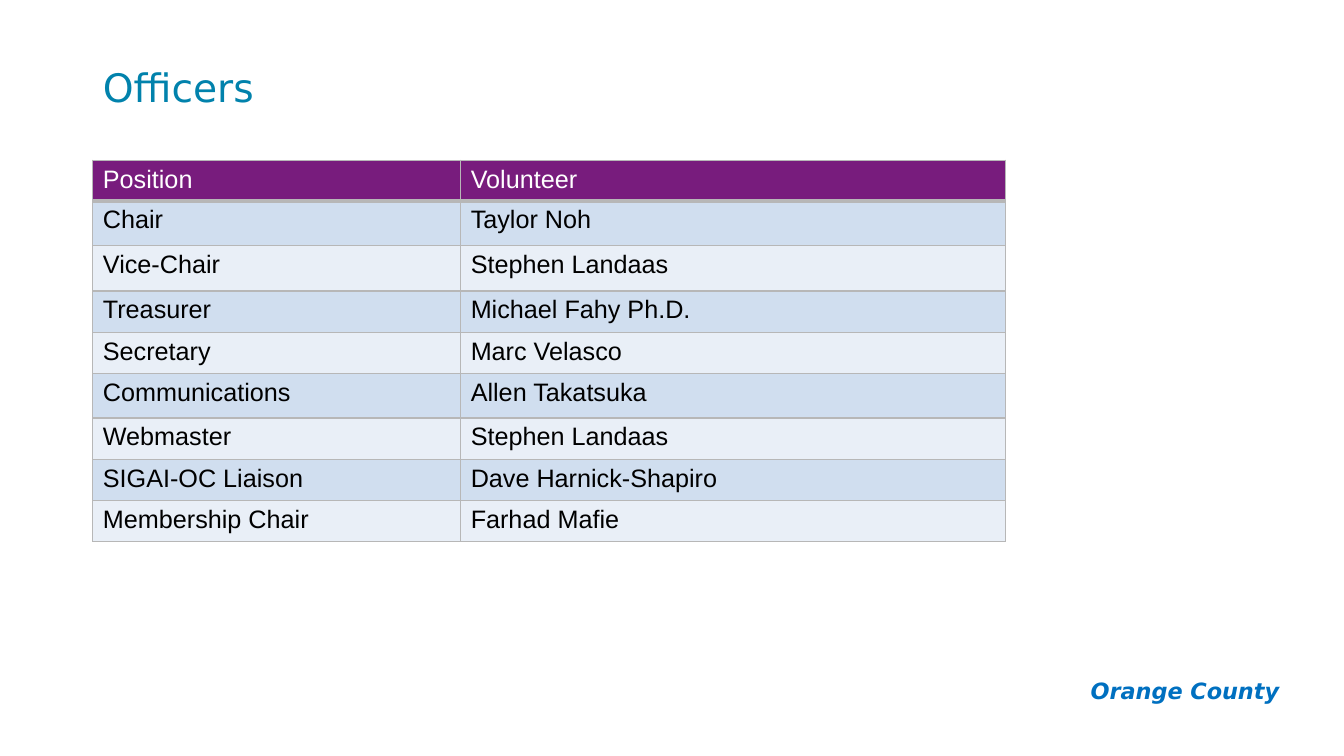
from lxml.etree import SubElement
from pptx import Presentation
from pptx.dml.color import RGBColor
from pptx.enum.text import MSO_ANCHOR, MSO_AUTO_SIZE, PP_ALIGN
from pptx.oxml.ns import qn
from pptx.util import Cm, Pt

COLORS = {
    "title": "0182AC", "chapter": "0070C0", "header": "781C7D",
    "odd_row": "D0DEEF", "even_row": "E9EFF7", "border": "B7B7B7",
    "white": "FFFFFF", "black": "000000",
}
OFFICERS = [
    ("Position", "Volunteer"),
    ("Chair", "Taylor Noh"),
    ("Vice-Chair", "Stephen Landaas"),
    ("Treasurer", "Michael Fahy Ph.D."),
    ("Secretary", "Marc Velasco"),
    ("Communications", "Allen Takatsuka"),
    ("Webmaster", "Stephen Landaas"),
    ("SIGAI-OC Liaison", "Dave Harnick-Shapiro"),
    ("Membership Chair", "Farhad Mafie"),
]
COLUMN_WIDTHS = [9.27, 13.72]
ROW_HEIGHTS = [0.91, 1.14, 1.14, 1.04, 1.04, 1.12, 1.04, 1.04, 1.04]


def apply(target, values):
    """Set every attribute named in values on the target."""
    for name, value in values.items():
        setattr(target, name, value)


class SlideBuilder:
    """Hold the style and the current slide, and add elements to it."""

    def __init__(self, page):
        """Start building on the given page."""
        self.page = page
        self.heading_font = "DejaVu Sans"
        self.table_font = "Arial"

    def add_text(self, frame, text, color, font, **paragraph):
        """Put one formatted paragraph into a text frame."""
        para = frame.paragraphs[0]
        apply(para, paragraph)
        span = para.add_run()
        span.text = text
        apply(span.font, font)
        span.font.color.rgb = RGBColor.from_string(COLORS[color])

    def title(self, text, left, top, width, height):
        """Move and format the title placeholder."""
        box = self.page.shapes.title
        apply(box, {"left": Cm(left), "top": Cm(top),
                    "width": Cm(width), "height": Cm(height)})
        apply(box.text_frame, {"vertical_anchor": MSO_ANCHOR.MIDDLE,
                               "auto_size": MSO_AUTO_SIZE.NONE})
        self.add_text(box.text_frame, text, "title",
                      {"name": self.heading_font, "size": Pt(28)},
                      alignment=PP_ALIGN.LEFT, line_spacing=0.9)

    def chapter(self, text, left, top, width, height):
        """Add the right-aligned chapter name."""
        box = self.page.shapes.add_textbox(Cm(left), Cm(top), Cm(width), Cm(height))
        sides = ("left", "top", "right", "bottom")
        apply(box.text_frame, {f"margin_{side}": Cm(0.25) for side in sides})
        apply(box.text_frame, {"word_wrap": True,
                               "auto_size": MSO_AUTO_SIZE.SHAPE_TO_FIT_TEXT})
        self.add_text(box.text_frame, text, "chapter",
                      {"name": self.heading_font, "size": Pt(16), "bold": True, "italic": True},
                      alignment=PP_ALIGN.RIGHT)

    def border(self, cell, widths):
        """Draw the cell borders, with widths in points by side."""
        properties = cell._tc.get_or_add_tcPr()
        for side, width in widths.items():
            line = SubElement(properties, qn(f"a:ln{side}"), w=str(Pt(width)))
            fill = SubElement(line, qn("a:solidFill"))
            SubElement(fill, qn("a:srgbClr"), val=COLORS["border"])

    def table(self, rows, left, top, column_widths, row_heights):
        """Add a table with a header row and alternating row fills."""
        frame = self.page.shapes.add_table(
            len(rows), len(column_widths), Cm(left), Cm(top),
            Cm(sum(column_widths)), Cm(sum(row_heights)))
        table = frame.table
        for column, width in zip(table.columns, column_widths):
            column.width = Cm(width)
        for index, (row, height, texts) in enumerate(zip(table.rows, row_heights, rows)):
            row.height = Cm(height)
            fill = "header" if index == 0 else ("even_row", "odd_row")[index % 2]
            for cell, text in zip(row.cells, texts):
                self.border(cell, {"L": 1, "R": 1, "T": 3 if index == 1 else 1,
                                   "B": 3 if index == 0 else 1})
                cell.fill.solid()
                cell.fill.fore_color.rgb = RGBColor.from_string(COLORS[fill])
                self.add_text(cell.text_frame, text, "black" if index else "white",
                              {"name": self.table_font, "size": Pt(18), "bold": False})


def main():
    """Build the officers slide and save it."""
    deck = Presentation()
    apply(deck, {"slide_width": Cm(33.87), "slide_height": Cm(19.05)})
    builder = SlideBuilder(deck.slides.add_slide(deck.slide_layouts[5]))
    builder.chapter("Orange County", 26.7, 16.81, 5.79, 1.19)
    builder.title("Officers", 2.34, 1.02, 29.21, 2.51)
    builder.table(OFFICERS, 2.34, 4.04, COLUMN_WIDTHS, ROW_HEIGHTS)
    deck.save("out.pptx")


if __name__ == "__main__":
    main()
